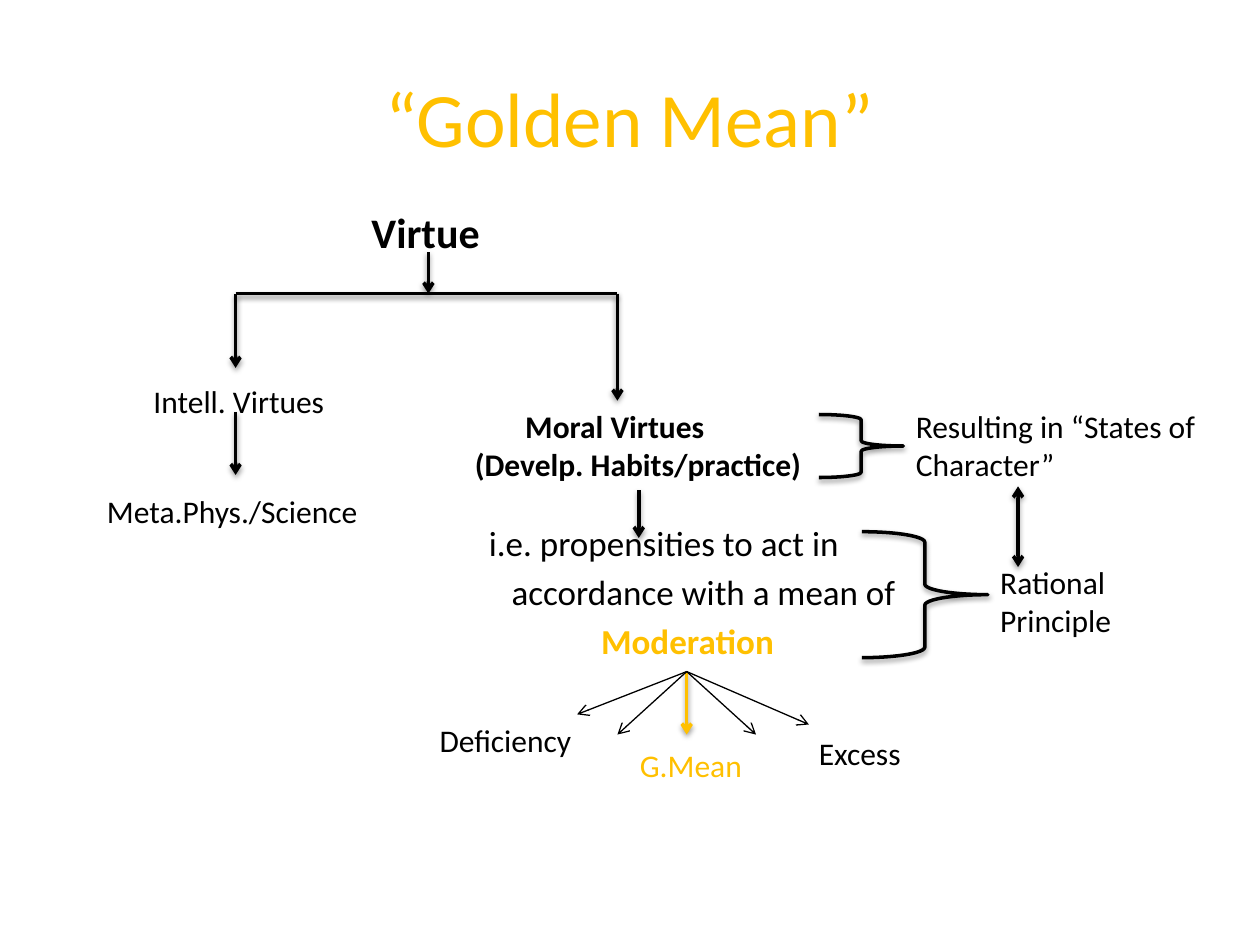
from lxml import etree
from pptx import Presentation
from pptx.dml.color import RGBColor
from pptx.enum import shapes, text
from pptx.oxml.ns import qn
from pptx.util import Inches, Pt

FONT = "Calibri"
BLACK = "000000"
GOLD = "FFC000"


def colour(value):
    return RGBColor.from_string(value)


def format_para(para, size, ink=BLACK, bold=False, indent=0):
    para.font.size = Pt(size)
    for span in para.runs:
        span.font.name = FONT
        span.font.size = Pt(size)
        span.font.bold = bold
        span.font.color.rgb = colour(ink)
    properties = para._p.get_or_add_pPr()
    properties.set("marL", str(Inches(indent)))
    properties.set("indent", "0")


def set_shadow(shape, visible):
    """Give the shape a soft shadow below it, or none at all."""
    shape_properties = shape._element.spPr
    effects = etree.SubElement(shape_properties, qn("a:effectLst"))
    if visible:
        shadow = etree.SubElement(effects, qn("a:outerShdw"), blurRad=str(Pt(3.1)),
                                  dist=str(Pt(1.6)), dir="5400000", rotWithShape="0")
        tint = etree.SubElement(shadow, qn("a:srgbClr"), val=BLACK)
        etree.SubElement(tint, qn("a:alpha"), val="38000")


def add_line(page, start, end, ink=BLACK, width=2, heads=("tailEnd",), shadow=True):
    line = page.shapes.add_connector(shapes.MSO_CONNECTOR.STRAIGHT,
                                     *map(Inches, (*start, *end)))
    line.line.color.rgb = colour(ink)
    line.line.width = Pt(width)
    for head in heads:
        etree.SubElement(line.line._get_or_add_ln(), qn(f"a:{head}"), type="arrow")
    set_shadow(line, shadow)


def add_label(page, box, words, size=18, ink=BLACK, bold=False, wrap=False, indents=(0,)):
    label = page.shapes.add_textbox(*map(Inches, box))
    frame = label.text_frame
    frame.text = words
    frame.word_wrap = wrap
    frame.auto_size = text.MSO_AUTO_SIZE.SHAPE_TO_FIT_TEXT
    for para, indent in zip(frame.paragraphs, indents):
        format_para(para, size, ink, bold, indent)


def add_brace(page, box):
    brace = page.shapes.add_shape(shapes.MSO_SHAPE.RIGHT_BRACE, *map(Inches, box))
    brace.fill.background()
    brace.line.color.rgb = colour(BLACK)
    brace.line.width = Pt(2)
    set_shadow(brace, True)


def place(placeholder, box):
    (placeholder.left, placeholder.top,
     placeholder.width, placeholder.height) = map(Inches, box)


def fill_title(page, box):
    title = page.shapes.title
    place(title, box)
    title.text_frame.text = "“Golden Mean”"
    title.text_frame.vertical_anchor = text.MSO_ANCHOR.MIDDLE
    para = title.text_frame.paragraphs[0]
    para.alignment = text.PP_ALIGN.CENTER
    format_para(para, 44, GOLD)


def fill_definition(page, box):
    """The meaning of moral virtue, set in the lower right of the body."""
    body = page.placeholders[1]
    place(body, box)
    frame = body.text_frame
    frame.margin_top = Inches(2.39)
    frame.text = "i.e. propensities to act in\naccordance with a mean of\nModeration"
    styles = [(BLACK, False, 3.21), (BLACK, False, 3.39), (GOLD, True, 4.1)]
    for para, (ink, bold, indent) in zip(frame.paragraphs, styles):
        format_para(para, 20, ink, bold, indent)
        para.space_before = Pt(4)
        etree.SubElement(para._p.get_or_add_pPr(), qn("a:buNone"))


def draw_virtue_tree(page, left, top):
    """Virtue splits into intellectual and moral virtues."""
    stem, moral, fork = left + 1.53, left + 3.03, top + 0.33
    add_line(page, (stem, top), (stem, fork))
    add_line(page, (left, fork), (moral, fork), heads=())
    add_line(page, (left, fork), (left, top + 0.92))
    add_line(page, (moral, fork), (moral, top + 1.18))
    add_line(page, (left, top + 1.27), (left, top + 1.77))
    add_line(page, (left + 3.2, top + 1.89), (left + 3.2, top + 2.27))

    add_label(page, (left + 0.98, top - 0.41, 1.07, 0.5), "Virtue", 24, bold=True)
    add_label(page, (left - 0.75, top + 0.98, 1.57, 0.4), "Intell. Virtues")
    add_label(page, (left - 1.12, top + 1.86, 2.21, 0.4), "Meta.Phys./Science")
    add_label(page, (left + 1.8, top + 1.18, 2.81, 0.71),
              "Moral Virtues\n(Develp. Habits/practice)", bold=True, indents=(0.4, 0))


def draw_results(page, left, top):
    """Braces lead to states of character and the rational principle."""
    add_brace(page, (left, top + 0.11, 0.67, 0.5))
    add_label(page, (left + 0.67, top, 2.42, 0.71),
              "Resulting in “States of Character”", wrap=True)
    add_brace(page, (left + 0.34, top + 1.04, 1, 1))
    add_label(page, (left + 1.34, top + 1.24, 1.17, 0.71), "Rational Principle", wrap=True)
    add_line(page, (left + 1.58, top + 0.68), (left + 1.58, top + 1.32),
             heads=("headEnd", "tailEnd"))


def draw_mean_fan(page, centre, top):
    """Arrows fan out from moderation to deficiency, mean and excess."""
    start = (centre, top)
    add_line(page, start, (centre, top + 0.5), GOLD)
    for across, down in [(0.55, 0.5), (-0.55, 0.5), (-0.87, 0.34), (0.97, 0.42)]:
        add_line(page, start, (centre + across, top + down), width=0.75, shadow=False)

    labels = [("Deficiency", -2.06, 0.34, 1.26, BLACK),
              ("G.Mean", -0.47, 0.54, 1.02, GOLD),
              ("Excess", 0.95, 0.45, 0.86, BLACK)]
    for words, across, down, width, ink in labels:
        add_label(page, (centre + across, top + down, width, 0.4), words, ink=ink)


def main():
    deck = Presentation()
    deck.slide_width, deck.slide_height = Inches(10), Inches(7.5)
    page = deck.slides.add_slide(deck.slide_layouts[1])
    fill_title(page, (0.5, 0.3, 9, 1.25))
    fill_definition(page, (0.57, 1.75, 9, 4.95))
    draw_virtue_tree(page, 1.87, 2)
    draw_results(page, 6.5, 3.18)
    draw_mean_fan(page, 5.45, 5.33)
    deck.save("out.pptx")


if __name__ == "__main__":
    main()
